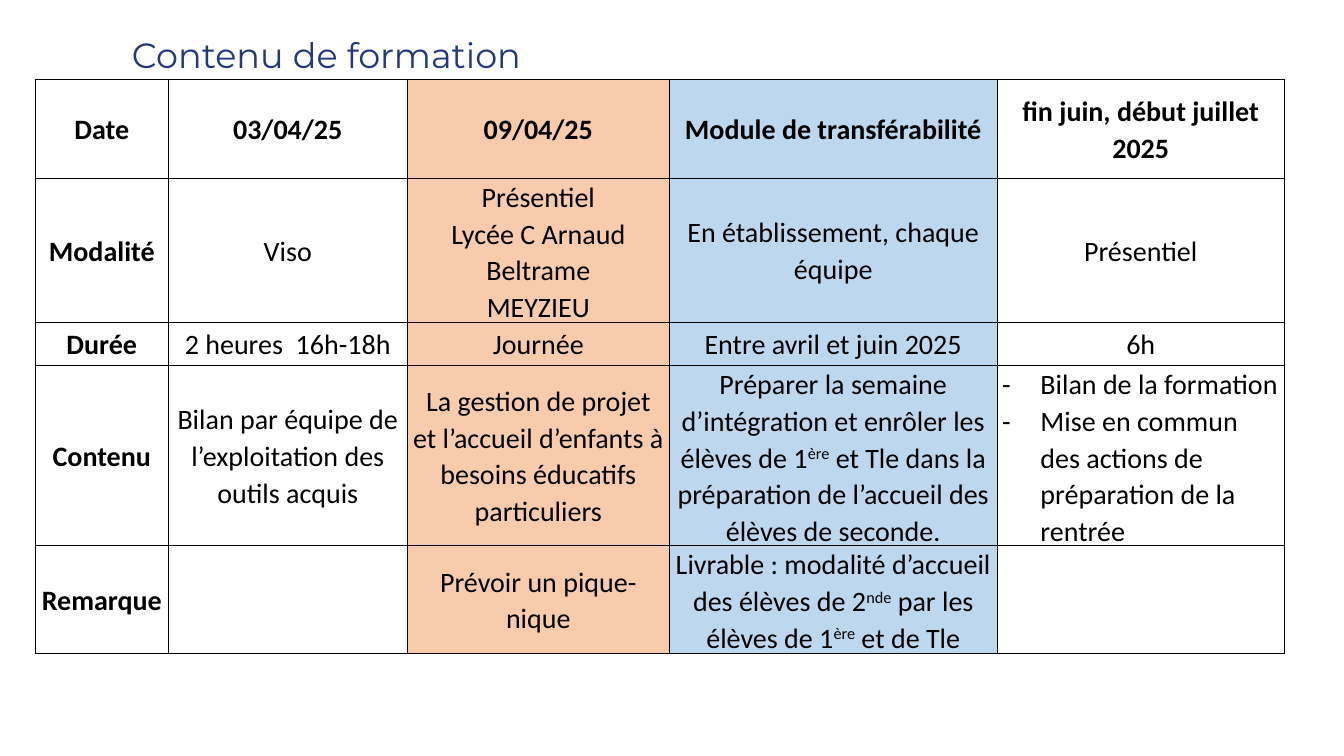
from lxml import etree
from pptx import Presentation
from pptx import util as u
from pptx.dml.color import RGBColor
from pptx.enum import text
from pptx.oxml.ns import qn

PX = 9144  # 100 px to the inch
INK = {"title": "223A7D", "text": "000000", "line": "000000",
       "peach": "F8CBAD", "sky": "BDD7EE"}
COLS = [132, 237, 260, 325, 285]
ROWS = [98, 143, 43, 178, 107]
FILLS = [None, None, "peach", "sky", None]
CELLS = [
    ["Date", "03/04/25", "09/04/25", "Module de transférabilité",
     "fin juin, début juillet 2025"],
    ["Modalité", "Viso", "Présentiel\nLycée C Arnaud Beltrame\nMEYZIEU",
     "En établissement, chaque équipe", "Présentiel"],
    ["Durée", "2 heures  16h-18h", "Journée", "Entre avril et juin 2025", "6h"],
    ["Contenu", "Bilan par équipe de l’exploitation des outils acquis",
     "La gestion de projet et l’accueil d’enfants à besoins éducatifs particuliers",
     "Préparer la semaine d’intégration et enrôler les élèves de 1^ère^ et Tle "
     "dans la préparation de l’accueil des élèves de seconde.",
     "- Bilan de la formation\n"
     "- Mise en commun des actions de préparation de la rentrée"],
    ["Remarque", "", "Prévoir un pique-nique",
     "Livrable : modalité d’accueil des élèves de 2^nde^ par les élèves de "
     "1^ère^ et de Tle", ""],
]


def px(n):
    return u.Emu(n * PX)


def rgb(name):
    return RGBColor.from_string(INK[name])


def dash(par):
    """Give the paragraph a hanging dash bullet."""
    props = par._p.get_or_add_pPr()
    props.set("marL", str(px(38)))
    props.set("indent", str(px(-38)))
    etree.SubElement(props, qn("a:buFont")).set("typeface", "Calibri")
    etree.SubElement(props, qn("a:buChar")).set("char", "-")


def write(frame, words, size=20, face="Calibri", color="text", bold=False,
          align=None, space=None):
    """Fill a frame: one paragraph a line, "- " for a bullet, ^x^ for superscript."""
    for i, line in enumerate(words.split("\n")):
        par = frame.add_paragraph() if i else frame.paragraphs[0]
        if space:
            par.line_spacing = space
        if line.startswith("- "):
            dash(par)
            line = line[2:]
            par.alignment = text.PP_ALIGN.LEFT
        else:
            par.alignment = align
        for k, part in enumerate(line.split("^")):
            run = par.add_run()
            run.text = part
            font = run.font
            font.size, font.name, font.bold = u.Pt(size), face, bold
            font.color.rgb = rgb(color)
            if k % 2:
                font._element.set("baseline", "30000")


def border(cell):
    props = cell._tc.get_or_add_tcPr()
    for side in ("lnL", "lnR", "lnT", "lnB"):
        line = etree.SubElement(props, qn("a:" + side), w=str(u.Pt(1)))
        fill = etree.SubElement(line, qn("a:solidFill"))
        etree.SubElement(fill, qn("a:srgbClr")).set("val", INK["line"])


def style(cell, fill):
    cell.margin_left = cell.margin_right = px(5)
    cell.margin_top = cell.margin_bottom = 0
    cell.vertical_anchor = text.MSO_ANCHOR.MIDDLE
    border(cell)
    if fill:
        cell.fill.solid()
        cell.fill.fore_color.rgb = rgb(fill)
    else:
        cell.fill.background()


def title(slide, words):
    box = slide.shapes.add_textbox(px(121), px(28), px(1182), px(52))
    box.text_frame.word_wrap = True
    write(box.text_frame, words, size=25, face="Montserrat", color="title")


def grid(slide):
    table = slide.shapes.add_table(len(ROWS), len(COLS), px(35), px(79),
                                   px(sum(COLS)), px(sum(ROWS))).table
    table.first_row = table.horz_banding = False
    for col, wide in zip(table.columns, COLS):
        col.width = px(wide)
    for r, (row, high) in enumerate(zip(table.rows, ROWS)):
        row.height = px(high)
        for c, cell in enumerate(row.cells):
            style(cell, FILLS[c])
            if CELLS[r][c]:
                write(cell.text_frame, CELLS[r][c], bold=r == 0 or c == 0,
                      align=text.PP_ALIGN.CENTER, space=1.07)


def main():
    deck = Presentation()
    deck.slide_width, deck.slide_height = px(1333), px(750)
    slide = deck.slides.add_slide(deck.slide_layouts[6])
    title(slide, "Contenu de formation")
    grid(slide)
    deck.save("out.pptx")


if __name__ == "__main__":
    main()
